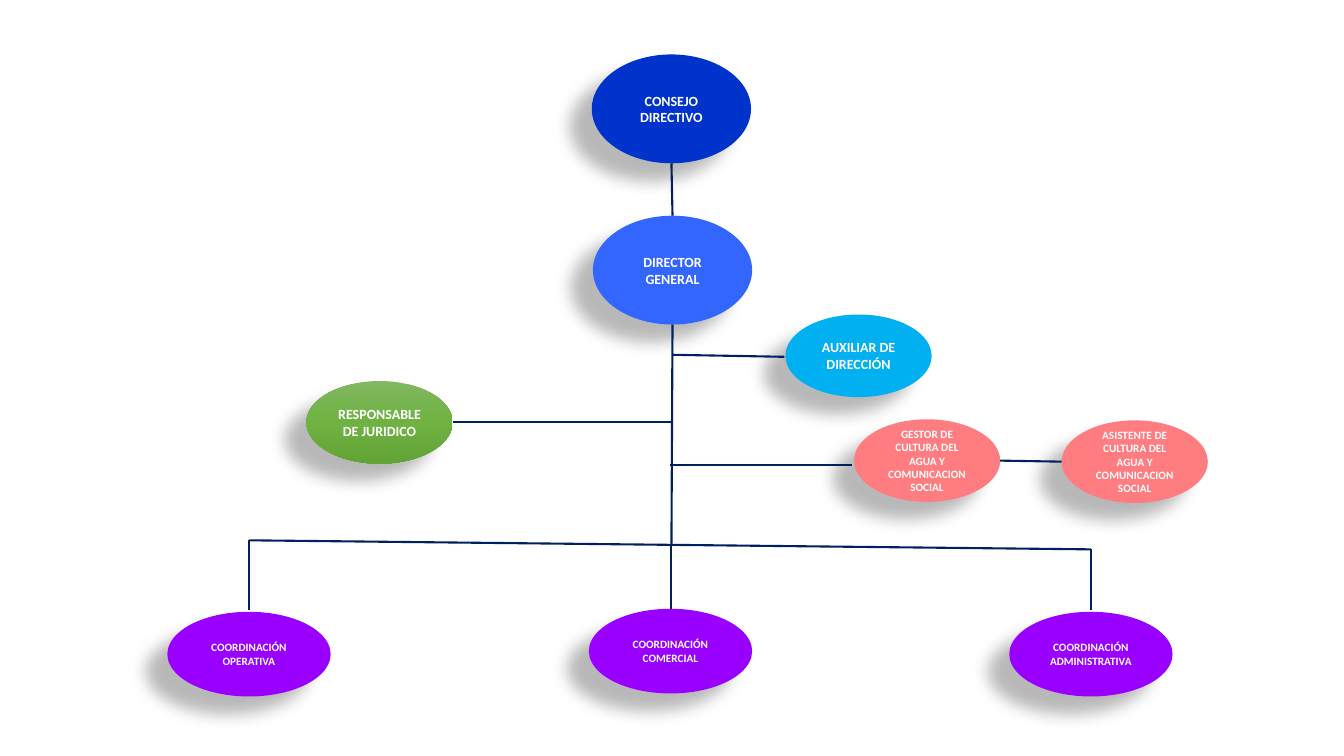
from dataclasses import dataclass

from lxml.etree import SubElement
from pptx import Presentation
from pptx.dml.color import RGBColor as RGB
from pptx.enum.shapes import MSO_CONNECTOR as CXN, MSO_SHAPE as SHAPE
from pptx.enum.text import MSO_ANCHOR as ANCHOR, PP_ALIGN as ALIGN
from pptx.oxml import parse_xml
from pptx.oxml.ns import nsdecls, qn
from pptx.util import Inches, Pt

prs = Presentation()
prs.slide_width, prs.slide_height = Inches(13.33), Inches(7.5)
s = prs.slides.add_slide(prs.slide_layouts[6])

Point = tuple[float, float]
LARGE, MEDIUM, WIDE = (11.85, 14.4), (10.88, 10.93), (12.15, 11.2)
GREEN = ((0, "81B861"), (50, "6FB242"), (100, "62A336"))
NAVY, WHITE = "002060", "FFFFFF"


@dataclass
class Node:
    text: str
    center: Point
    size: Point
    fill: str | tuple
    pt: int = 10

    def side(self, dx: int, dy: int) -> Point:
        (x, y), (w, h) = self.center, self.size
        return x + dx * w / 2, y + dy * h / 2


@dataclass
class Link:
    start: Point
    end: Point


def color(value: str) -> RGB:
    return RGB.from_string(value)


def px(share: float) -> int:
    return round(prs.slide_width * share / 100)


def py(share: float) -> int:
    return round(prs.slide_height * share / 100)


def fill_gradient(sp, stops: tuple) -> None:
    sp.fill.gradient()
    sp.fill.gradient_angle = 270
    gs_lst = sp._element.spPr.find(qn("a:gradFill")).find(qn("a:gsLst"))
    for gs in list(gs_lst):
        gs_lst.remove(gs)
    for pos, value in stops:
        gs = SubElement(gs_lst, qn("a:gs"), pos=str(pos * 1000))
        SubElement(gs, qn("a:srgbClr"), val=value)


def add_shadow(sp) -> None:
    sp.shadow.inherit = False
    sp._element.spPr.find(qn("a:effectLst")).append(parse_xml(
        f'<a:outerShdw {nsdecls("a")} blurRad="{Pt(11.8)}" dist="{Pt(19.7)}"'
        f' dir="{141 * 60000}" algn="ctr" rotWithShape="0">'
        '<a:srgbClr val="000000"><a:alpha val="28000"/></a:srgbClr></a:outerShdw>'))


def draw_node(node: Node) -> None:
    left, top = node.side(-1, -1)
    w, h = node.size
    sp = s.shapes.add_shape(SHAPE.OVAL, px(left), py(top), px(w), py(h))
    if isinstance(node.fill, str):
        sp.fill.solid()
        sp.fill.fore_color.rgb = color(node.fill)
    else:
        fill_gradient(sp, node.fill)
    sp.line.fill.background()
    add_shadow(sp)
    tf = sp.text_frame
    tf.text = node.text
    tf.word_wrap = True
    tf.vertical_anchor = ANCHOR.MIDDLE
    p = tf.paragraphs[0]
    p.alignment = ALIGN.CENTER
    font = p.runs[0].font
    font.name, font.size, font.bold = "Calibri", Pt(node.pt), True
    font.color.rgb = color(WHITE)


def draw_link(link: Link) -> None:
    (x1, y1), (x2, y2) = link.start, link.end
    c = s.shapes.add_connector(CXN.STRAIGHT, px(x1), py(y1), px(x2), py(y2))
    c.line.color.rgb = color(NAVY)
    c.line.width = Pt(1.5)
    SubElement(c._element.spPr, qn("a:effectLst"))


director = Node("DIRECTOR GENERAL", (50.04, 35.73), LARGE, "3366FF")
auxiliar = Node("AUXILIAR DE DIRECCIÓN", (63.88, 47.07), MEDIUM, "00B0F0")
asistente = Node("ASISTENTE DE CULTURA DEL AGUA Y COMUNICACION SOCIAL",
                 (84.43, 61.07), MEDIUM, "FF7C80", 8)
juridico = Node("RESPONSABLE DE JURIDICO", (28.24, 55.87), MEDIUM, GREEN)
gestor = Node("GESTOR DE CULTURA DEL AGUA Y COMUNICACION SOCIAL",
              (68.98, 60.93), MEDIUM, "FF7C80", 8)
comercial = Node("COORDINACIÓN COMERCIAL", (49.89, 86.13), WIDE, "9900FF", 8)
administrativa = Node("COORDINACIÓN ADMINISTRATIVA", (81.17, 86.53), WIDE, "9900FF", 8)
operativa = Node("COORDINACIÓN OPERATIVA", (18.53, 86.53), WIDE, "9900FF", 8)
consejo = Node("CONSEJO DIRECTIVO", (49.96, 14.4), LARGE, "0033CC")

nodes = [director, auxiliar, asistente, juridico, gestor,
         comercial, administrativa, operativa, consejo]

fork = (49.96, 72)
bar_left, bar_right = (18.53, 71.47), (81.17, 72.67)
links = [
    Link(consejo.side(0, 1), director.side(0, -1)),
    Link(director.side(0, 1), fork),
    Link((50.04, 46.93), (58.36, 47.2)),
    Link(juridico.side(1, 0), (50.04, 55.87)),
    Link((49.89, 61.47), (63.39, 61.47)),
    Link(asistente.side(-1, 0), gestor.side(1, 0)),
    Link(bar_left, bar_right),
    Link(bar_left, (18.53, 80.67)),
    Link(fork, (49.96, 80.53)),
    Link(bar_right, (81.17, 80.67)),
]

for node in nodes:
    draw_node(node)
for link in links:
    draw_link(link)

prs.save("out.pptx")
